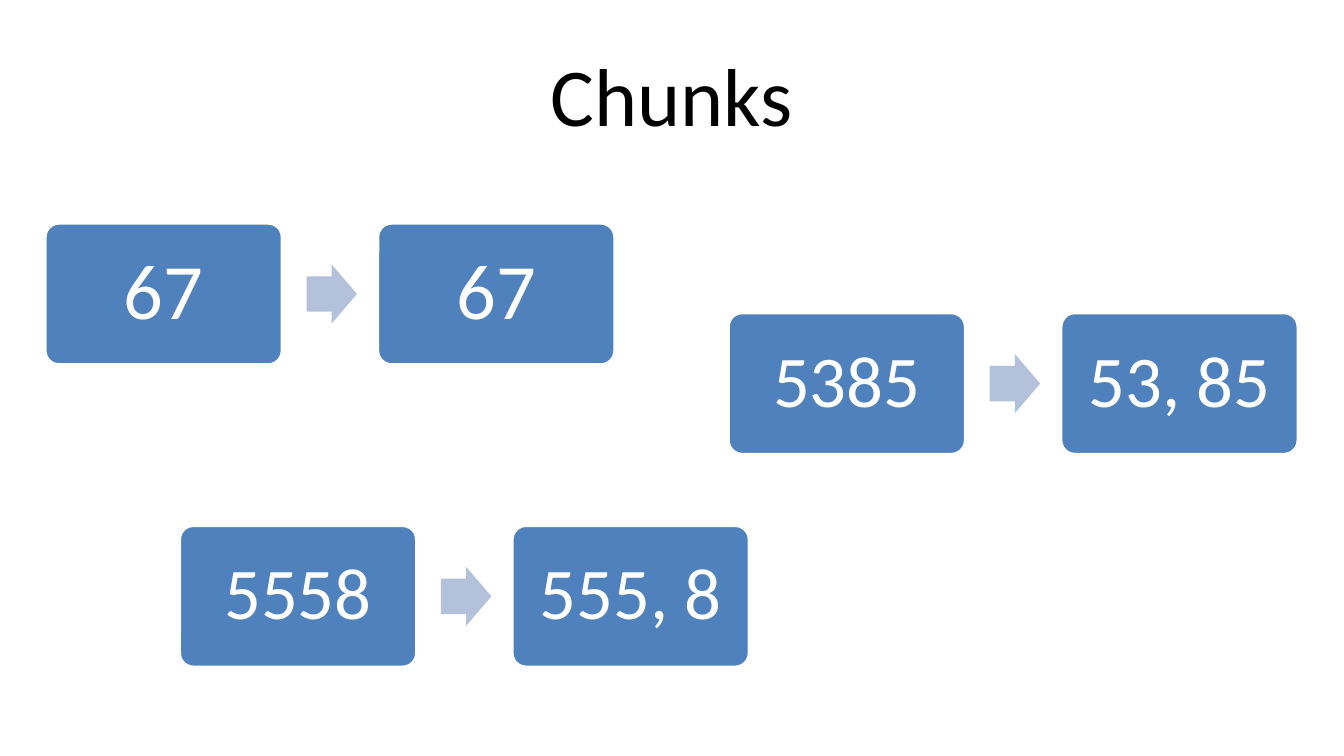
"""Build the Chunks slide: three number boxes, each with an arrow to its chunks."""
from dataclasses import dataclass

from pptx import Presentation
from pptx.dml.color import RGBColor
from pptx.enum import shapes, text
from pptx.util import Pt

BLACK = RGBColor(0x00, 0x00, 0x00)
WHITE = RGBColor(0xFF, 0xFF, 0xFF)
BLUE = RGBColor(0x4F, 0x81, 0xBD)
PALE_BLUE = RGBColor(0xB3, 0xC1, 0xDB)

BOX_WIDTH, BOX_HEIGHT = 127.4, 76.2
BOX_STEP = 178.2
ARROW_WIDTH, ARROW_HEIGHT = 27, 31.6
ARROW_OFFSET = 140.2
INSET = 12


@dataclass(frozen=True)
class Chunking:
    number: str
    chunks: str
    left: float
    top: float
    size: float


CHUNKINGS = (
    Chunking("67", "67", 24, 119.4, 42),
    Chunking("5385", "53, 85", 390, 167.4, 39),
    Chunking("5558", "555, 8", 96, 281.4, 39),
)


def write(shape, words: str, size: float, color: RGBColor, inset: float, spacing: float) -> None:
    frame = shape.text_frame
    margins = {f"margin_{side}": Pt(inset) for side in ("left", "top", "right", "bottom")}
    layout = {"word_wrap": True, "vertical_anchor": text.MSO_ANCHOR.MIDDLE, **margins}
    for name, value in layout.items():
        setattr(frame, name, value)
    para = frame.paragraphs[0]
    for name, value in {"alignment": text.PP_ALIGN.CENTER, "line_spacing": spacing}.items():
        setattr(para, name, value)
    span = para.add_run()
    span.text = words
    for name, value in {"name": "Calibri", "size": Pt(size)}.items():
        setattr(span.font, name, value)
    span.font.color.rgb = color


def add_filled(group, kind, left: float, top: float, width: float, height: float,
               fill: RGBColor, adjustments: tuple[float, ...]):
    shape = group.shapes.add_shape(kind, Pt(left), Pt(top), Pt(width), Pt(height))
    shape.shadow.inherit = False
    shape.fill.solid()
    shape.fill.fore_color.rgb = fill
    for index, value in enumerate(adjustments):
        shape.adjustments[index] = value
    return shape


def add_box(group, words: str, left: float, top: float, size: float) -> None:
    box = add_filled(group, shapes.MSO_SHAPE.ROUNDED_RECTANGLE, left, top,
                     BOX_WIDTH, BOX_HEIGHT, BLUE, (0.1,))
    box.line.color.rgb = WHITE
    box.line.width = Pt(2)
    write(box, words, size, WHITE, INSET, 0.9)


def add_chunking(page, item: Chunking) -> None:
    group = page.shapes.add_group_shape()
    add_box(group, item.number, item.left, item.top, item.size)
    arrow = add_filled(group, shapes.MSO_SHAPE.RIGHT_ARROW, item.left + ARROW_OFFSET,
                       item.top + (BOX_HEIGHT - ARROW_HEIGHT) / 2,
                       ARROW_WIDTH, ARROW_HEIGHT, PALE_BLUE, (0.6, 0.5))
    arrow.line.fill.background()
    add_box(group, item.chunks, item.left + BOX_STEP, item.top, item.size)


def main() -> None:
    deck = Presentation()
    deck.slide_width, deck.slide_height = Pt(720), Pt(405)
    page = deck.slides.add_slide(deck.slide_layouts[6])
    title = page.shapes.add_textbox(Pt(36), Pt(16.2), Pt(648), Pt(67.5))
    write(title, "Chunks", 44, BLACK, 3.6, 1.0)
    for item in CHUNKINGS:
        add_chunking(page, item)
    deck.save("out.pptx")


if __name__ == "__main__":
    main()
